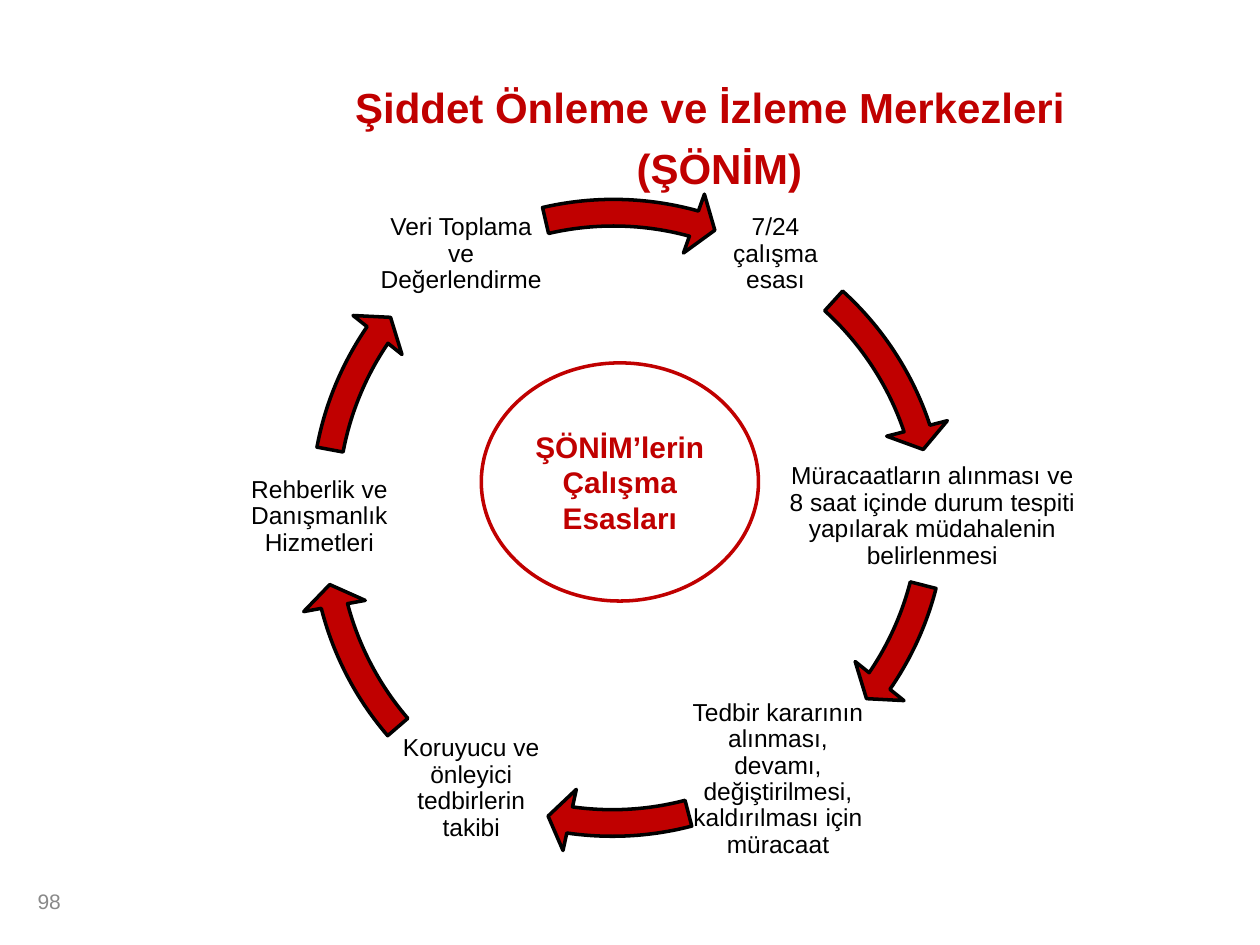
"""Build the slide showing the working principles of ŞÖNİM as a cycle."""
import dataclasses

import pptx
import pptx.dml.color
import pptx.enum.shapes
import pptx.enum.text
import pptx.util

Inches = pptx.util.Inches
Shape = pptx.enum.shapes.MSO_SHAPE
Align = pptx.enum.text.PP_ALIGN
Anchor = pptx.enum.text.MSO_ANCHOR


@dataclasses.dataclass(frozen=True)
class Theme:
    font: str = "Arial"
    red: str = "C00000"
    black: str = "000000"
    white: str = "FFFFFF"
    grey: str = "898989"
    title_size: int = 24
    center_size: int = 17
    step_size: int = 14
    number_size: int = 12
    line_width: int = 2


class SlideBuilder:
    def __init__(self, slide, theme):
        self.slide = slide
        self.theme = theme

    def color(self, value):
        return pptx.dml.color.RGBColor.from_string(value)

    def set_text(self, paragraph, text, size, color, align, bold=False, spacing=None):
        paragraph.text = text
        paragraph.alignment = align
        paragraph.line_spacing = spacing
        font = paragraph.font
        font.name = self.theme.font
        font.size = pptx.util.Pt(size)
        font.bold = bold
        font.color.rgb = self.color(color)

    def text_box(self, left, top, width, height, anchor=Anchor.MIDDLE, inset=None):
        box = self.slide.shapes.add_textbox(
            Inches(left), Inches(top), Inches(width), Inches(height))
        frame = box.text_frame
        frame.word_wrap = True
        frame.vertical_anchor = anchor
        if inset is not None:
            frame.margin_left = frame.margin_right = Inches(inset)
            frame.margin_top = frame.margin_bottom = Inches(inset)
        return frame

    def shape(self, kind, left, top, width, height, fill, line):
        shape = self.slide.shapes.add_shape(
            kind, Inches(left), Inches(top), Inches(width), Inches(height))
        shape.shadow.inherit = False
        shape.fill.solid()
        shape.fill.fore_color.rgb = self.color(fill)
        shape.line.color.rgb = self.color(line)
        shape.line.width = pptx.util.Pt(self.theme.line_width)
        return shape

    def number(self, text):
        frame = self.text_box(0.2, 6.95, 2.33, 0.4)
        self.set_text(frame.paragraphs[0], text, self.theme.number_size,
                      self.theme.grey, Align.LEFT)

    def title(self, first, second):
        frame = self.text_box(2.72, 0.52, 5.98, 1.03, Anchor.TOP)
        lines = ((frame.paragraphs[0], first, Align.JUSTIFY),
                 (frame.add_paragraph(), second, Align.CENTER))
        for paragraph, text, align in lines:
            self.set_text(paragraph, text, self.theme.title_size, self.theme.red,
                          align, bold=True, spacing=1.2)

    def step(self, text, place):
        frame = self.text_box(*place, inset=0.02)
        self.set_text(frame.paragraphs[0], text, self.theme.step_size,
                      self.theme.black, Align.CENTER, spacing=0.9)

    def arrow(self, left, top, start, end):
        arrow = self.shape(Shape.CIRCULAR_ARROW, left, top, 5.28, 5.28,
                           self.theme.red, self.theme.black)
        degree = 0.6
        values = (0.04, 4.17 * degree, end * degree, start * degree, 0.047)
        for index, value in enumerate(values):
            arrow.adjustments[index] = value

    def center(self, text):
        oval = self.shape(Shape.OVAL, 3.82, 2.88, 2.2, 1.89,
                          self.theme.white, self.theme.red)
        oval.text_frame.word_wrap = True
        oval.text_frame.vertical_anchor = Anchor.MIDDLE
        self.set_text(oval.text_frame.paragraphs[0], text, self.theme.center_size,
                      self.theme.red, Align.CENTER, bold=True)


STEPS = (
    ("7/24 çalışma esası",
     (5.68, 1.53, 0.95, 0.98), (2.37, 1.52, 312.2, 341.49)),
    ("Müracaatların alınması ve\v8 saat içinde durum tespiti "
     "yapılarak müdahalenin belirlenmesi",
     (6.18, 3.56, 2.44, 1.08), (2.37, 1.41, 14.39, 34.52)),
    ("Tedbir kararının alınması, devamı, değiştirilmesi, "
     "kaldırılması için müracaat",
     (5.46, 5.48, 1.43, 1.41), (2.22, 1.5, 75.38, 98.14)),
    ("Koruyucu ve önleyici tedbirlerin takibi",
     (3.14, 5.77, 1.2, 0.98), (2.33, 1.57, 139.28, 165.48)),
    ("Rehberlik ve Danışmanlık Hizmetleri",
     (1.93, 3.56, 1.21, 1.08), (2.33, 1.37, 190.64, 214.4)),
    ("Veri Toplama ve Değerlendirme",
     (2.99, 1.53, 1.34, 0.98), (2.23, 1.44, 256.95, 285.46)),
)


def main():
    deck = pptx.Presentation()
    deck.slide_width = Inches(10)
    deck.slide_height = Inches(7.5)
    page = SlideBuilder(deck.slides.add_slide(deck.slide_layouts[6]), Theme())
    page.number("98")
    page.title("Şiddet Önleme ve İzleme Merkezleri", "(ŞÖNİM)")
    for text, place, arc in STEPS:
        page.step(text, place)
        page.arrow(*arc)
    page.center("ŞÖNİM’lerin Çalışma Esasları")
    deck.save("out.pptx")


if __name__ == "__main__":
    main()
